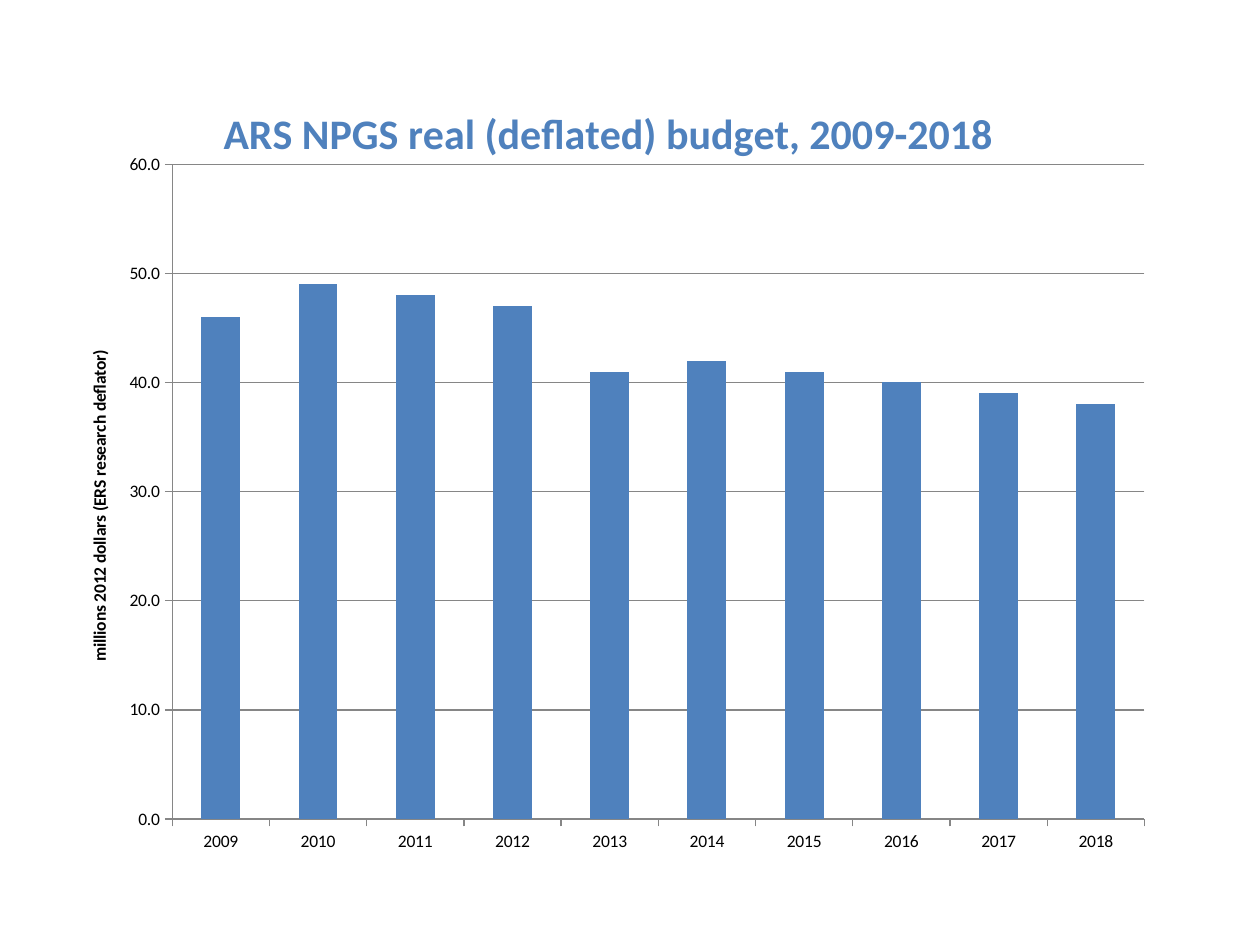
from lxml import etree
from pptx import Presentation
from pptx.chart.data import CategoryChartData
from pptx.dml.color import RGBColor
from pptx.enum.chart import XL_CHART_TYPE as ChartType, XL_TICK_MARK as TickMark
from pptx.oxml.ns import qn
from pptx.util import Inches, Pt

TITLE = "ARS NPGS real (deflated) budget, 2009-2018"
AXIS_TITLE = "millions 2012 dollars (ERS research deflator)"
BUDGET = {
    "2009": 46, "2010": 49, "2011": 48, "2012": 47, "2013": 41,
    "2014": 42, "2015": 41, "2016": 40, "2017": 39, "2018": 38,
}
BLUE = RGBColor(0x4F, 0x81, 0xBD)
BLACK = RGBColor(0, 0, 0)
GRAY = RGBColor(0x86, 0x86, 0x86)
FONT = "Calibri"


def place(element, **settings):
    """Give a chart part a manual layout, in fractions of the chart area."""
    layout = element.find(qn("c:layout"))
    if layout is None:
        layout = etree.Element(qn("c:layout"))
        element.insert(1 if element.find(qn("c:tx")) is not None else 0, layout)
    for child in list(layout):
        layout.remove(child)
    manual = etree.SubElement(layout, qn("c:manualLayout"))
    for name, value in settings.items():
        etree.SubElement(manual, qn(f"c:{name}")).set("val", str(value))


def write_title(title, text, size, color, x, y):
    title.text_frame.text = text
    font = title.text_frame.paragraphs[0].runs[0].font
    font.name, font.size, font.bold = FONT, Pt(size), True
    font.color.rgb = color
    place(title._element, xMode="edge", yMode="edge", x=x, y=y)


def style_line(line):
    line.color.rgb = GRAY
    line.width = Pt(0.75)


deck = Presentation()
deck.slide_width, deck.slide_height = Inches(10), Inches(7.5)
page = deck.slides.add_slide(deck.slide_layouts[6])

data = CategoryChartData(number_format="0.0")
data.categories = list(BUDGET)
data.add_series("Series 1", list(BUDGET.values()))
chart = page.shapes.add_chart(
    ChartType.COLUMN_CLUSTERED,
    Inches(0.5), Inches(0.58), Inches(8.67), Inches(6.58), data,
).chart
chart.has_legend = False
chart.font.name, chart.font.size = FONT, Pt(10)
chart.font.color.rgb = BLACK

plot = chart.plots[0]
plot.gap_width = 150
plot.vary_by_categories = False
fill = plot.series[0].format.fill
fill.solid()
fill.fore_color.rgb = BLUE

for axis in (chart.category_axis, chart.value_axis):
    axis.major_tick_mark = TickMark.OUTSIDE
    axis.minor_tick_mark = TickMark.NONE
    style_line(axis.format.line)

value_axis = chart.value_axis
value_axis.minimum_scale, value_axis.maximum_scale = 0, 60
value_axis.major_unit = 10
value_axis.has_major_gridlines = True
style_line(value_axis.major_gridlines.format.line)
value_axis.tick_labels.number_format = "0.0"
value_axis.tick_labels.number_format_is_linked = False

write_title(chart.chart_title, TITLE, 24, BLUE, 0.14, 0.03)
write_title(value_axis.axis_title, AXIS_TITLE, 10, BLACK, 0.02, 0.33)
place(
    chart._chartSpace.find(".//" + qn("c:plotArea")),
    layoutTarget="inner", xMode="edge", yMode="edge",
    x=0.1, y=0.11, w=0.89, h=0.79,
)

deck.save("out.pptx")
